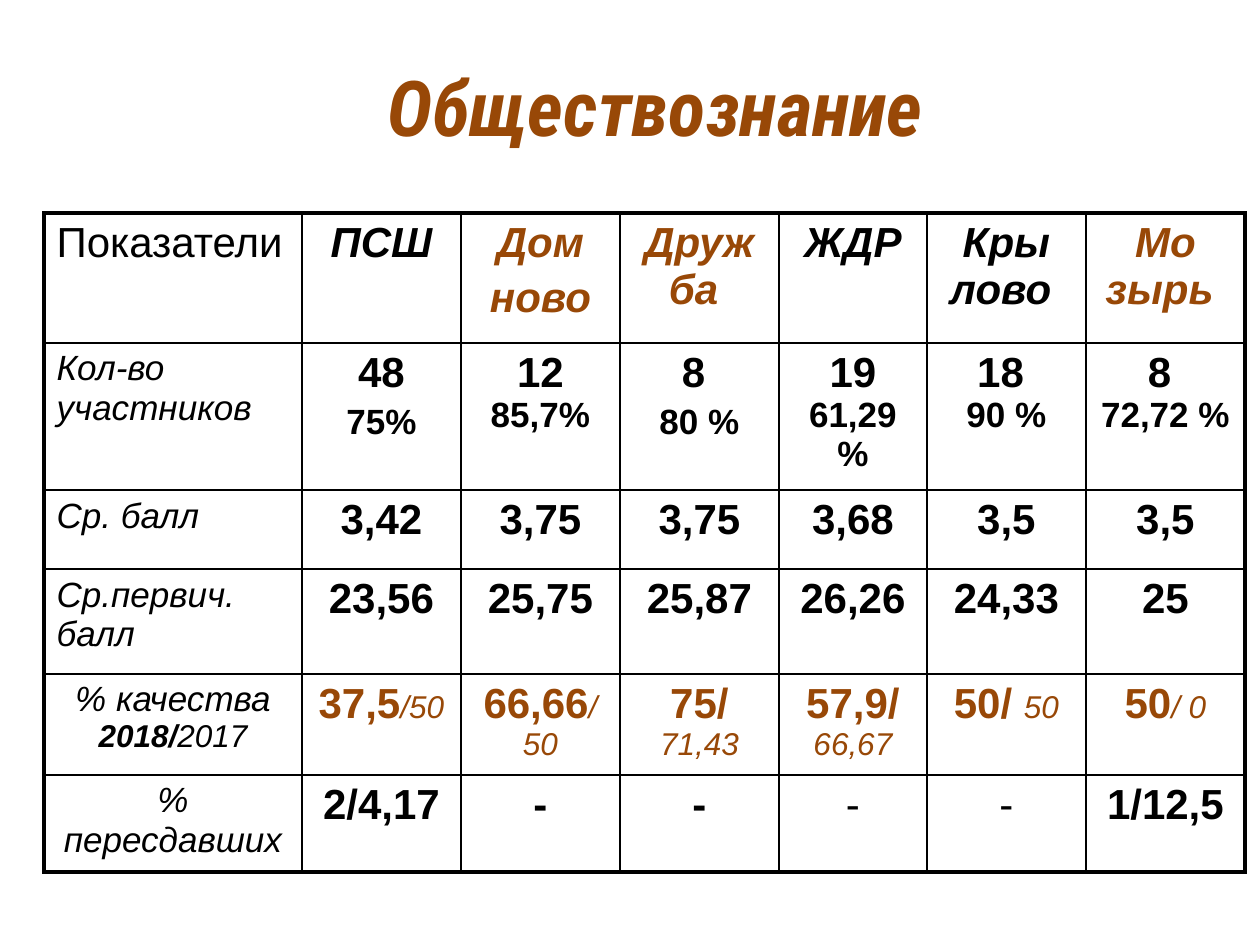
from lxml.etree import SubElement
from pptx import Presentation
from pptx.dml.color import RGBColor
from pptx.enum.text import MSO_ANCHOR, PP_ALIGN
from pptx.oxml.ns import qn
from pptx.util import Pt

COLORS = {"ink": "000000", "accent": "984807"}
STYLES = {
    "label": (24, False, False, "ink"),
    "school": (24, True, True, "ink"),
    "school_accent": (24, True, True, "accent"),
    "indicator": (20, False, True, "ink"),
    "year": (18, True, True, "ink"),
    "past_year": (18, False, True, "ink"),
    "value": (24, True, False, "ink"),
    "share": (20, True, False, "ink"),
    "dash": (24, False, False, "ink"),
    "quality": (24, True, False, "accent"),
    "past_quality": (18, False, True, "accent"),
    "title": (44, True, True, "accent"),
}
COLUMNS = [258, 159, 159, 159, 148, 159, 159]
ROWS = [130, 147, 79, 105, 101, 97]


def px(length):
    """Turn px into EMU."""
    return round(length * 914400 / 126)


def style_run(run, style, font_name):
    """Apply a named text style to a run."""
    size, bold, italic, color = STYLES[style]
    run.font.name = font_name
    run.font.size = Pt(size)
    run.font.bold = bold
    run.font.italic = italic
    run.font.color.rgb = RGBColor.from_string(COLORS[color])


def line(*pieces, gap=0):
    """Describe one paragraph as its styled pieces and the space before it."""
    return pieces, gap


def plain(style, *texts):
    """Describe one single-line cell for each text."""
    return [[line((text, style))] for text in texts]


def quality(*pairs):
    """Describe cells that hold this year's and last year's quality."""
    return [[line((now, "quality"), (past, "past_quality"))] for now, past in pairs]


def results():
    """Return the cells of the results table, row by row."""
    return [
        plain("label", "Показатели") + plain("school", "ПСШ")
        + [[line(("Дом", "school_accent")), line(("ново", "school_accent"), gap=5)]]
        + plain("school_accent", "Дружба ") + plain("school", "ЖДР")
        + [[line(("Кры", "school")), line(("лово ", "school"))],
           [line(("Мо", "school_accent")), line(("зырь ", "school_accent"))]],
        plain("indicator", "Кол-во участников")
        + [[line(("48", "value")), line(("75%", "share"), gap=4)],
           [line(("12 ", "value"), ("85,7%", "share"))],
           [line(("8 ", "value")), line(("80 %", "share"), gap=4)],
           [line(("19 ", "value"), ("61,29 %", "share"))],
           [line(("18 ", "value")), line(("90 %", "share"))],
           [line(("8 ", "value")), line(("72,72 %", "share"))]],
        plain("indicator", "Ср. балл")
        + plain("value", "3,42", "3,75", "3,75", "3,68", "3,5", "3,5"),
        plain("indicator", "Ср.первич. балл")
        + plain("value", "23,56", "25,75", "25,87", "26,26", "24,33", "25"),
        [[line(("% качества ", "indicator"), ("2018/", "year"), ("2017", "past_year"))]]
        + quality(("37,5", "/50"), ("66,66", "/ 50"), ("75/", " 71,43"),
                  ("57,9/ ", "66,67"), ("50/ ", "50"), ("50", "/ 0")),
        plain("indicator", "% пересдавших") + plain("value", "2/4,17", "-", "-")
        + plain("dash", "-", "-") + plain("value", "1/12,5"),
    ]


def border_cell(cell, widths):
    """Draw the left, right, top and bottom borders of a cell."""
    properties = cell._tc.get_or_add_tcPr()
    for position, (side, width) in enumerate(zip(("lnL", "lnR", "lnT", "lnB"), widths)):
        border = properties.makeelement(qn(f"a:{side}"), {"w": str(Pt(width))})
        properties.insert(position, border)
        fill = SubElement(border, qn("a:solidFill"))
        SubElement(fill, qn("a:srgbClr"), val=COLORS["ink"])


def fill_cell(cell, paragraphs, alignment):
    """Write styled paragraphs into a cell."""
    cell.fill.background()
    frame = cell.text_frame
    for index, (pieces, gap) in enumerate(paragraphs):
        paragraph = frame.add_paragraph() if index else frame.paragraphs[0]
        paragraph.alignment = alignment
        if gap:
            paragraph.space_before = Pt(gap)
        for text, style in pieces:
            run = paragraph.add_run()
            run.text = text
            style_run(run, style, "Arial")


def add_title(slide, left, top, width, height):
    """Place the subject name, set a little right of the middle."""
    title = slide.shapes.add_textbox(px(left), px(top), px(width), px(height))
    frame = title.text_frame
    frame.word_wrap = True
    frame.vertical_anchor = MSO_ANCHOR.MIDDLE
    frame.margin_left = px(63)
    frame.text = "Обществознание"
    frame.paragraphs[0].alignment = PP_ALIGN.CENTER
    style_run(frame.paragraphs[0].runs[0], "title", "Roboto Condensed")


def add_results(slide, left, top):
    """Place the table of results with a thick outer frame."""
    last_row, last_column = len(ROWS) - 1, len(COLUMNS) - 1
    table = slide.shapes.add_table(
        len(ROWS), len(COLUMNS), px(left), px(top), px(sum(COLUMNS)), px(sum(ROWS))
    ).table
    table.first_row = table.horz_banding = False
    for column, width in zip(table.columns, COLUMNS):
        column.width = px(width)
    for row, height in zip(table.rows, ROWS):
        row.height = px(height)
    for r, cells in enumerate(results()):
        for c, paragraphs in enumerate(cells):
            cell = table.cell(r, c)
            left_aligned = c == 0 and r < 4
            fill_cell(cell, paragraphs, PP_ALIGN.LEFT if left_aligned else PP_ALIGN.CENTER)
            outer = (c == 0, c == last_column, r == 0, r == last_row)
            border_cell(cell, [2.25 if edge else 1 for edge in outer])


def main():
    """Build the slide and save it."""
    presentation = Presentation()
    presentation.slide_width, presentation.slide_height = px(1260), px(945)
    slide = presentation.slides.add_slide(presentation.slide_layouts[6])
    add_title(slide, 63, 38, 1134, 136)
    add_results(slide, 44, 213)
    presentation.save("out.pptx")


if __name__ == "__main__":
    main()
